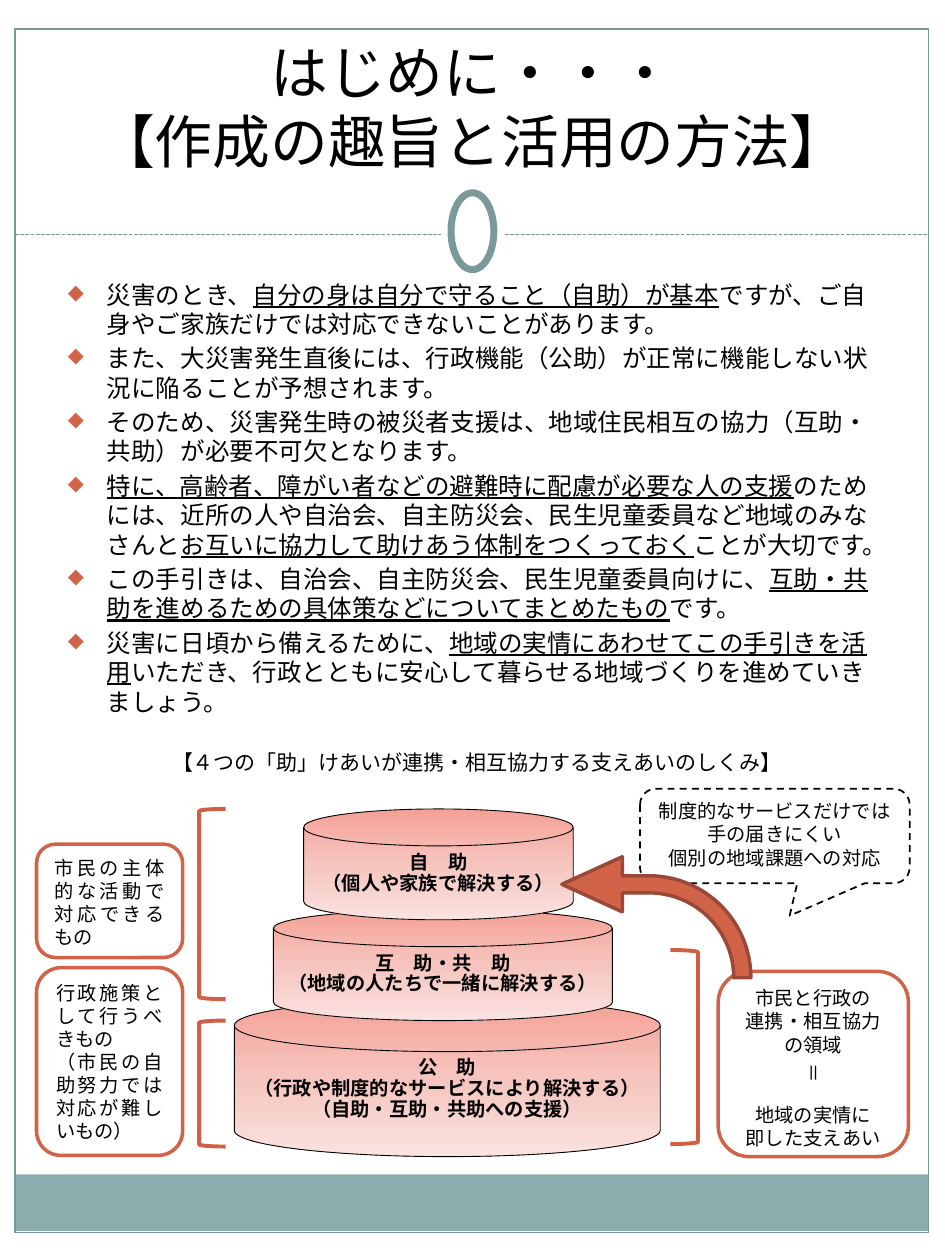
"""Build the preface slide on mutual help in a disaster, on a grid of 75 columns by 100 rows."""
from copy import deepcopy

from lxml import etree
from pptx import Presentation
from pptx import util as u
from pptx.dml.color import RGBColor
from pptx.enum import dml, shapes, text
from pptx.oxml import ns

deck = Presentation()
deck.slide_width, deck.slide_height = u.Inches(7.5), u.Inches(10)
cell = deck.slide_width // 75
slide = deck.slides.add_slide(deck.slide_layouts[6])
hue = RGBColor.from_string
kind = shapes.MSO_SHAPE
dash = dml.MSO_LINE
mid, just = text.PP_ALIGN.CENTER, text.PP_ALIGN.JUSTIFY
RED, BRICK, TEAL, WHITE, BLACK = "D16349", "D05F44", "7C999A", "FFFFFF", "000000"


def draw(form, box, fill=None, line=None, wide=1, flip=False, adj=()):
    """Add a shape, or a text box when form is None, at a box given in grid cells."""
    spot = [round(n * cell) for n in box]
    if form is None:
        return slide.shapes.add_textbox(*spot)
    item = slide.shapes.add_shape(form, *spot)
    item.shadow.inherit = False
    for i, share in enumerate(adj):
        item.adjustments[i] = share
    if fill:
        item.fill.solid()
        item.fill.fore_color.rgb = hue(fill)
    else:
        item.fill.background()
    if line:
        item.line.color.rgb = hue(line)
        item.line.width = u.Pt(wide)
    else:
        item.line.fill.background()
    if flip:
        item._element.spPr.xfrm.set("flipH", "1")
    return item


def write(item, paras, size=11, font="Calibri", bold=False, align=None, lead=None,
          before=0, mark=None, anchor=text.MSO_ANCHOR.TOP):
    """Fill a shape with paragraphs; parts between bars are underlined."""
    frame = item.text_frame
    frame.word_wrap = True
    frame.vertical_anchor = anchor
    for i, words in enumerate(paras):
        para = frame.add_paragraph() if i else frame.paragraphs[0]
        para.alignment = align
        para.line_spacing = lead
        para.space_before = u.Pt(before)
        if mark:
            prop = para._p.get_or_add_pPr()
            prop.set("marL", str(u.Inches(0.31)))
            prop.set("indent", str(-u.Inches(0.31)))
            tint = etree.SubElement(prop, ns.qn("a:buClr"))
            etree.SubElement(tint, ns.qn("a:srgbClr"), val=RED)
            etree.SubElement(prop, ns.qn("a:buSzPct"), val="85000")
            etree.SubElement(prop, ns.qn("a:buChar"), char=mark)
        for j, part in enumerate(words.split("|")):
            if not part:
                continue
            for k, piece in enumerate(part.split("\n")):
                if k:
                    para.add_line_break()
                run = para.add_run()
                run.text = piece
                run.font.size = u.Pt(size)
                run.font.name = font
                run.font.bold = bold
                run.font.underline = j % 2 == 1
                run.font.color.rgb = hue(BLACK)
                face = etree.SubElement(run.font._element, ns.qn("a:ea"))
                face.set("typeface", font)
    return frame


draw(kind.RECTANGLE, (1.2, 93.2, 72.5, 4.5), "8CADAE")
draw(kind.RECTANGLE, (1.2, 2.3, 72.5, 95.5), None, TEAL, 0.75)
ends = [round(n * cell) for n in (1.2, 18.6, 73.7, 18.6)]
rule = slide.shapes.add_connector(shapes.MSO_CONNECTOR.STRAIGHT, *ends)
rule.line.color.rgb = hue(TEAL)
rule.line.width = u.Pt(0.75)
rule.line.dash_style = dash.SQUARE_DOT
etree.SubElement(rule._element.spPr, ns.qn("a:effectLst"))
draw(kind.OVAL, (35, 13.9, 5, 8.9), WHITE)
draw(kind.OVAL, (35.8, 15.3, 3.4, 6.1), WHITE, TEAL, 4)

write(draw(None, (2.5, 3.3, 70, 11.1)), ["はじめに・・・\n【作成の趣旨と活用の方法】"],
      size=33, font="Noto Sans Mono", align=mid, anchor=text.MSO_ANCHOR.BOTTOM)

points = [
    "災害のとき、|自分の身は自分で守ること（自助）が基本|ですが、ご自身やご家族だけでは対応できないことがあります。",
    "また、大災害発生直後には、行政機能（公助）が正常に機能しない状況に陥ることが予想されます。",
    "そのため、災害発生時の被災者支援は、地域住民相互の協力（互助・共助）が必要不可欠となります。",
    "|特に、高齢者、障がい者などの避難時に配慮が必要な人の支援|のためには、近所の人や自治会、自主防災会、"
    "民生児童委員など地域のみなさんと|お互いに協力して助けあう体制をつくっておく|ことが大切です。",
    "この手引きは、自治会、自主防災会、民生児童委員向けに、"
    "|互助・共助を進めるための具体策などについてまとめたもの|です。",
    "災害に日頃から備えるために、|地域の実情にあわせてこの手引きを活用|いただき、"
    "行政とともに安心して暮らせる地域づくりを進めていきましょう。",
]
write(draw(None, (4.4, 21.7, 66.9, 36)), points, size=14, before=2.8, mark="◆")
write(draw(None, (4.4, 59, 66.9, 3)),
      ["【４つの「助」けあいが連携・相互協力する支えあいのしくみ】"], size=12, align=mid)

tiers = [
    ((18.6, 79.3, 33.8, 12.5),
     ["公　助", "（行政や制度的なサービスにより解決する）", "（自助・互助・共助への支援）"]),
    ((21.7, 72.2, 26.9, 8.8), ["互　助・共　助", "（地域の人たちで一緒に解決する）"]),
    ((24.1, 64.2, 21.4, 8.8), ["自　助", "（個人や家族で解決する）"]),
]
for box, words in tiers:
    disk = draw(kind.FLOWCHART_MAGNETIC_DISK, box, WHITE, BLACK, 0.5)
    disk.fill.gradient()
    disk.fill.gradient_angle = 270
    first = disk.fill.gradient_stops[0]._gs
    first.addnext(deepcopy(first))
    for stop, tone, place in zip(disk.fill.gradient_stops, ("F4A095", "F6C5BF", "FAE2E0"), (0, 0.5, 1)):
        stop.color.rgb = hue(tone)
        stop.position = place
    write(disk, words, bold=True, align=mid, lead=u.Pt(12))

for box, flip in [((15.8, 81, 2.1, 10), False), ((15.8, 64.2, 2.1, 15.1), False),
                  ((53.2, 75.4, 2.2, 15.4), True)]:
    draw(kind.LEFT_BRACKET, box, None, BRICK, 2.25, flip)

notes = [
    ((2.9, 76.8, 11.6, 14.9), just,
     ["行政施策として行うべきもの", "（市民の自助努力では対応が難しいもの）"]),
    ((2.9, 67, 11.6, 9), just, ["市民の主体的な活動で対応できるもの"]),
    ((57, 77.1, 15.1, 14.7), mid,
     ["市民と行政の", "連携・相互協力", "の領域", "地域の実情に", "即した支えあい"]),
]
for box, align, words in notes:
    frame = write(draw(kind.ROUNDED_RECTANGLE, box, WHITE, RED, 2), words, align=align)
frame.paragraphs[3].space_before = u.Pt(26.8)

bubble = draw(kind.ROUNDED_RECTANGULAR_CALLOUT, (50.8, 62.6, 21.4, 7.5), WHITE, BLACK, 1,
              adj=(0.055, 0.844, 0.167))
bubble.line.dash_style = dash.DASH
write(bubble, ["制度的なサービスだけでは手の届きにくい", "個別の地域課題への対応"], align=mid)

draw(kind.BENT_ARROW, (44.6, 68, 15, 9.6), RED, "9B4936", 2, True, (0.141, 0.228, 0.5, 0.897))

equal = write(draw(None, (57.1, 77.1, 15.1, 14.7)), ["　＝"], align=mid, anchor=text.MSO_ANCHOR.MIDDLE)
equal._txBody.bodyPr.set("vert", "vert")

deck.save("out.pptx")
